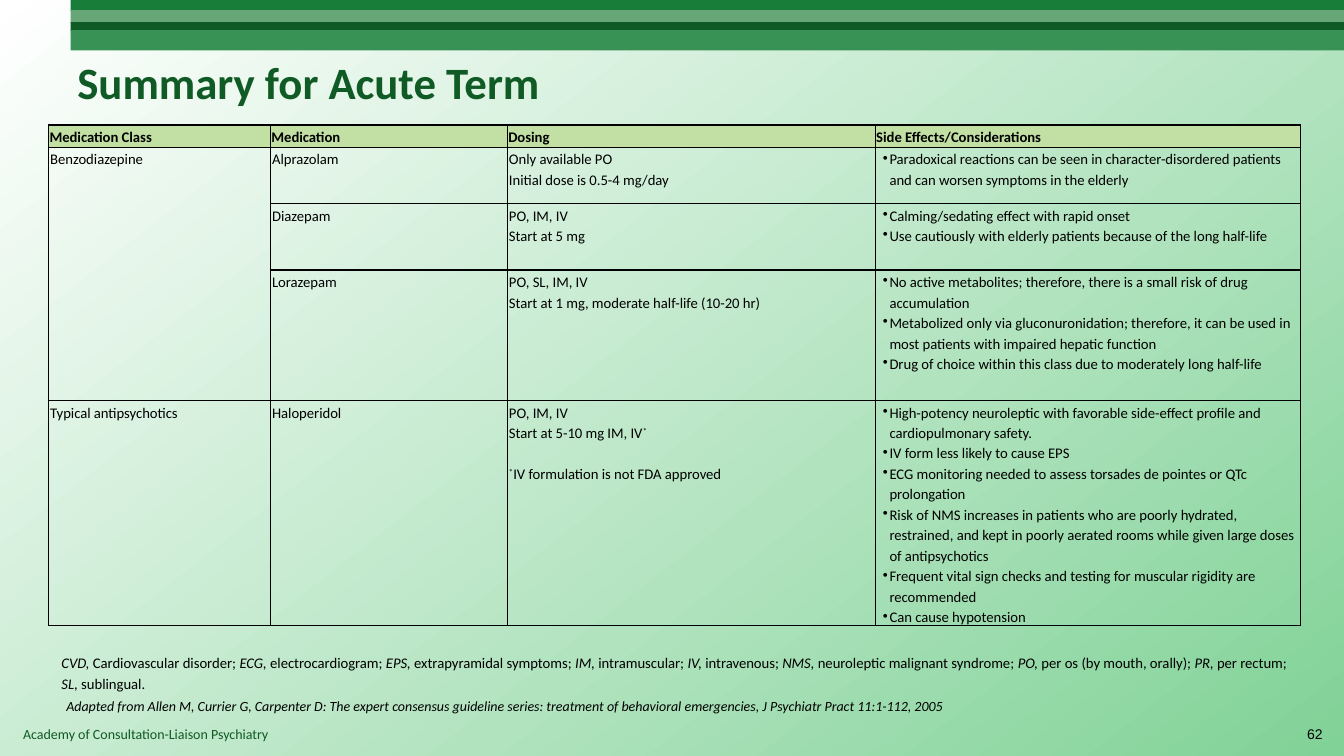
from dataclasses import dataclass

from lxml.etree import SubElement
from pptx import Presentation
from pptx.dml.color import RGBColor
from pptx.enum.shapes import MSO_SHAPE as Shape
from pptx.enum.text import MSO_ANCHOR as Anchor, PP_ALIGN as Align
from pptx.oxml.ns import qn
from pptx.util import Pt

WHITE = RGBColor(0xFF, 0xFF, 0xFF)
BLACK = RGBColor(0, 0, 0)
MINT = RGBColor(0x81, 0xD2, 0x97)
FOREST = RGBColor(0x10, 0x5A, 0x25)
GREEN = RGBColor(0x17, 0x7D, 0x38)
SAGE = RGBColor(0x66, 0xA6, 0x77)
LEAF = RGBColor(0x38, 0x91, 0x55)
LIME = RGBColor(0xC2, 0xE0, 0xA3)

PLAIN = "{2D5ABB26-0587-4C30-8999-92F81FD0307C}"  # no style, no grid
LEFT_BAR, WIDE = 50.4, 960


@dataclass
class Bar:
    top: float
    high: float
    color: RGBColor


@dataclass
class Run:
    text: str
    bold: bool = False
    ital: bool = False
    sup: bool = False
    size: float = 10.5
    color: RGBColor = BLACK
    face: str = "Calibri"


@dataclass
class Line:
    runs: list[Run]
    bullet: bool = False
    gap: float = 0


@dataclass
class Label:
    box: tuple[float, float, float, float]
    run: Run
    anchor: Anchor = Anchor.MIDDLE
    align: Align = Align.LEFT


@dataclass
class Drug:
    group: str
    name: str
    dose: list[Line]
    notes: list[str]
    high: float


def plain(*texts: str) -> list[Line]:
    return [Line([Run(text)]) for text in texts]


BARS = [Bar(0, 7.9, GREEN), Bar(7.2, 9.4, SAGE),
        Bar(15.8, 6.5, FOREST), Bar(21.6, 14.4, LEAF)]

LABELS = [
    Label((9.4, 514.8, 666, 19.4),
          Run("Academy of Consultation-Liaison Psychiatry", size=10, color=FOREST),
          Anchor.TOP),
    Label((48.2, 13, 864, 90),
          Run("Summary for Acute Term", bold=True, size=32, color=FOREST)),
    Label((913.7, 509.8, 38.2, 28.8), Run("62", size=10, face="Arial"),
          align=Align.RIGHT),
    Label((40.3, 494.6, 879.8, 19.4),
          Run("Adapted from Allen M, Currier G, Carpenter D: The expert consensus "
              "guideline series: treatment of behavioral emergencies, "
              "J Psychiatr Pract 11:1-112, 2005", ital=True, size=10)),
]

HEADS = ["Medication Class", "Medication", "Dosing", "Side Effects/Considerations"]
HEAD_HIGH = 13.7
COLS = [158.5, 169.2, 262.8, 303.8]
DRUGS = [
    Drug("Benzodiazepine", "Alprazolam",
         plain("Only available PO", "Initial dose is 0.5-4 mg/day"),
         ["Paradoxical reactions can be seen in character-disordered patients "
          "and can worsen symptoms in the elderly"], 40.3),
    Drug("", "Diazepam", plain("PO, IM, IV", "Start at 5 mg"),
         ["Calming/sedating effect with rapid onset",
          "Use cautiously with elderly patients because of the long half-life"], 47.5),
    Drug("", "Lorazepam",
         plain("PO, SL, IM, IV", "Start at 1 mg, moderate half-life (10-20 hr)"),
         ["No active metabolites; therefore, there is a small risk of drug accumulation",
          "Metabolized only via gluconuronidation; therefore, it can be used in "
          "most patients with impaired hepatic function",
          "Drug of choice within this class due to moderately long half-life"], 93.2),
    Drug("Typical antipsychotics", "Haloperidol",
         plain("PO, IM, IV") + [
             Line([Run("Start at 5-10 mg IM, IV"), Run("*", sup=True)]),
             Line([Run("*", sup=True), Run("IV formulation is not FDA approved")],
                  gap=14.7)],
         ["High-potency neuroleptic with favorable side-effect profile and "
          "cardiopulmonary safety.",
          "IV form less likely to cause EPS",
          "ECG monitoring needed to assess torsades de pointes or QTc prolongation",
          "Risk of NMS increases in patients who are poorly hydrated, restrained, and "
          "kept in poorly aerated rooms while given large doses of antipsychotics",
          "Frequent vital sign checks and testing for muscular rigidity are recommended",
          "Can cause hypotension"], 160.6),
]

TERMS = {
    "CVD": "Cardiovascular disorder", "ECG": "electrocardiogram",
    "EPS": "extrapyramidal symptoms", "IM": "intramuscular", "IV": "intravenous",
    "NMS": "neuroleptic malignant syndrome", "PO": "per os (by mouth, orally)",
    "PR": "per rectum", "SL": "sublingual",
}


def add_run(para, run: Run) -> None:
    item = para.add_run()
    item.text = run.text
    font = item.font
    font.name, font.size = run.face, Pt(run.size)
    font.bold, font.italic = run.bold, run.ital
    font.color.rgb = run.color
    if run.sup:
        item._r.get_or_add_rPr().set("baseline", "30000")


def indent(para, left: float, first: float = 0):
    props = para._p.get_or_add_pPr()
    props.set("marL", str(Pt(left)))
    props.set("indent", str(Pt(first)))
    return props


def fill_cell(cell, lines: list[Line], side: float, edge: float,
              anchor: Anchor = Anchor.TOP) -> None:
    cell.margin_left = cell.margin_right = Pt(side)
    cell.margin_top = cell.margin_bottom = Pt(edge)
    cell.vertical_anchor = anchor
    frame = cell.text_frame
    for i, line in enumerate(lines):
        para = frame.add_paragraph() if i else frame.paragraphs[0]
        para.line_spacing = 1.15
        if line.gap:
            para.space_before = Pt(line.gap)
        if line.bullet:
            SubElement(indent(para, 9, -4.7), qn("a:buChar"), char="•")
        for run in line.runs:
            add_run(para, run)


def add_grid(slide, left: float, top: float, cols: list[float], rows: list[float]):
    frame = slide.shapes.add_table(len(rows), len(cols), Pt(left), Pt(top),
                                   Pt(sum(cols)), Pt(sum(rows)))
    grid = frame.table
    grid.first_row = grid.horz_banding = False
    grid._tbl.tblPr.find(qn("a:tableStyleId")).text = PLAIN
    for col, wide in zip(grid.columns, cols):
        col.width = Pt(wide)
    for row, high in zip(grid.rows, rows):
        row.height = Pt(high)
    for cell in grid.iter_cells():
        cell.fill.background()
    return grid


def add_edges(cell) -> None:
    props = cell._tc.get_or_add_tcPr()
    for i, side in enumerate(("lnL", "lnR", "lnT", "lnB")):
        edge = SubElement(props, qn(f"a:{side}"), w=str(Pt(1)))
        paint = SubElement(edge, qn("a:solidFill"))
        SubElement(paint, qn("a:srgbClr"), val=str(BLACK))
        props.insert(i, edge)


def add_drugs(slide) -> None:
    grid = add_grid(slide, 34.7, 89.3, COLS, [HEAD_HIGH] + [d.high for d in DRUGS])
    for cell in grid.iter_cells():
        add_edges(cell)
    for col, head in enumerate(HEADS):
        cell = grid.cell(0, col)
        cell.fill.solid()
        cell.fill.fore_color.rgb = LIME
        fill_cell(cell, [Line([Run(head, bold=True)])], 0.7, 0.7, Anchor.BOTTOM)
    grid.cell(1, 0).merge(grid.cell(3, 0))
    for row, drug in enumerate(DRUGS, 1):
        notes = [Line([Run(note)], bullet=True) for note in drug.notes]
        parts = [plain(drug.group) if drug.group else [],
                 plain(drug.name), drug.dose, notes]
        for col, lines in enumerate(parts):
            fill_cell(grid.cell(row, col), lines, 1.2, 0.7)


def add_terms(slide) -> None:
    runs = []
    for i, (term, sense) in enumerate(TERMS.items(), 1):
        end = "; " if i < len(TERMS) else "."
        runs += [Run(f"{term},", ital=True), Run(f" {sense}{end}")]
    cell = add_grid(slide, 28.8, 461.5, [904.3], [38.2]).cell(0, 0)
    fill_cell(cell, [Line(runs)], 2.9, 2.2, Anchor.MIDDLE)
    indent(cell.text_frame.paragraphs[0], 12.2)


def add_bar(slide, bar: Bar) -> None:
    shape = slide.shapes.add_shape(Shape.RECTANGLE, Pt(LEFT_BAR), Pt(bar.top),
                                   Pt(WIDE - LEFT_BAR), Pt(bar.high))
    shape.shadow.inherit = False
    shape.fill.solid()
    shape.fill.fore_color.rgb = bar.color
    shape.line.fill.background()


def add_label(slide, label: Label) -> None:
    frame = slide.shapes.add_textbox(*map(Pt, label.box)).text_frame
    frame.word_wrap = True
    frame.vertical_anchor = label.anchor
    para = frame.paragraphs[0]
    para.alignment = label.align
    add_run(para, label.run)


def main() -> None:
    deck = Presentation()
    deck.slide_width, deck.slide_height = Pt(WIDE), Pt(540)
    slide = deck.slides.add_slide(deck.slide_layouts[6])
    back = slide.background.fill
    back.gradient()
    back.gradient_angle = 308
    for stop, color in zip(back.gradient_stops, (WHITE, MINT)):
        stop.color.rgb = color
    for bar in BARS:
        add_bar(slide, bar)
    for label in LABELS:
        add_label(slide, label)
    add_drugs(slide)
    add_terms(slide)
    deck.save("out.pptx")


if __name__ == "__main__":
    main()
